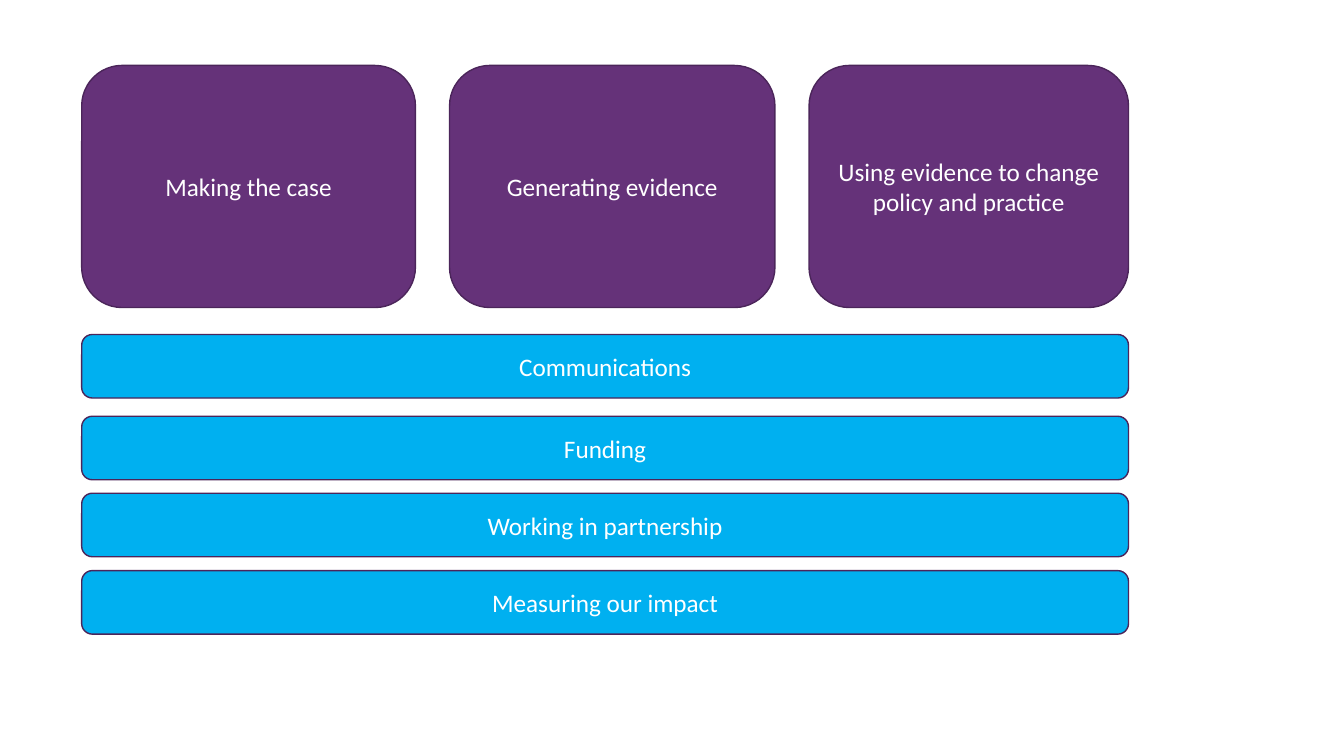
from pptx import Presentation
from pptx.dml.color import RGBColor
from pptx.enum.shapes import MSO_SHAPE
from pptx.enum.text import MSO_ANCHOR, PP_ALIGN
from pptx.util import Cm, Pt

ROUNDED = MSO_SHAPE.ROUNDED_RECTANGLE
MIDDLE = MSO_ANCHOR.MIDDLE
CENTER = PP_ALIGN.CENTER

COLORS = {"pillar": "653279", "bar": "00B0F0", "line": "4B255A", "text": "FFFFFF"}

# Layout in centimetres
LEFT = 2.06
PILLAR_TOP, PILLAR_HEIGHT, PILLAR_GAP = 1.65, 6.1, 0.86
BAR_HEIGHT = 1.6

PILLARS = [
    ("Making the case", 8.41),
    ("Generating evidence", 8.2),
    ("Using evidence to change policy and practice", 8.05),
]
BARS = [
    ("Communications", 8.43),
    ("Funding", 10.49),
    ("Working in partnership", 12.43),
    ("Measuring our impact", 14.38),
]


def rgb(name):
    return RGBColor.from_string(COLORS[name])


def write_text(tf, text, size=18, font="Calibri", color="text", align=CENTER):
    tf.word_wrap = True
    tf.vertical_anchor = MIDDLE
    p = tf.paragraphs[0]
    p.alignment = align
    r = p.add_run()
    r.text = text
    r.font.size = Pt(size)
    r.font.name = font
    r.font.color.rgb = rgb(color)


def add_box(shapes, text, left, top, width, height, fill):
    sp = shapes.add_shape(ROUNDED, Cm(left), Cm(top), Cm(width), Cm(height))
    sp.shadow.inherit = False
    sp.fill.solid()
    sp.fill.fore_color.rgb = rgb(fill)
    sp.line.color.rgb = rgb("line")
    sp.line.width = Pt(1)
    write_text(sp.text_frame, text)


def add_pillars(shapes):
    """Place the pillars side by side and return their total width."""
    left = LEFT
    for text, width in PILLARS:
        add_box(shapes, text, left, PILLAR_TOP, width, PILLAR_HEIGHT, "pillar")
        left += width + PILLAR_GAP
    return left - PILLAR_GAP - LEFT


def add_bars(shapes, width):
    for text, top in BARS:
        add_box(shapes, text, LEFT, top, width, BAR_HEIGHT, "bar")


def main():
    prs = Presentation()
    prs.slide_width, prs.slide_height = Cm(33.87), Cm(19.05)
    s = prs.slides.add_slide(prs.slide_layouts[6])
    shapes = s.shapes.add_group_shape().shapes

    # Three pillars, with the supporting bars spanning them below
    total_width = add_pillars(shapes)
    add_bars(shapes, total_width)

    prs.save("out.pptx")


if __name__ == "__main__":
    main()
